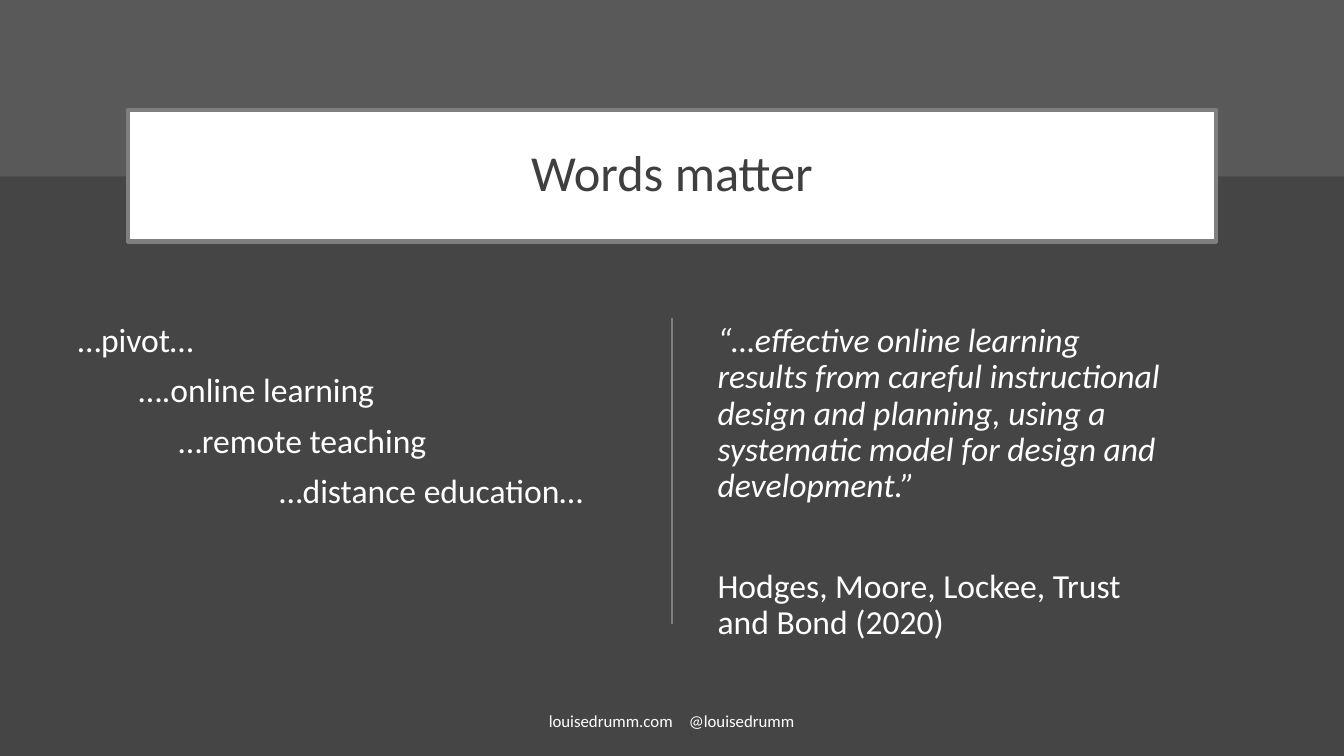
"""Build the "Words matter" slide."""
from pptx import Presentation
from pptx.dml.color import RGBColor as Rgb
from pptx.enum.shapes import MSO_CONNECTOR as Conn, MSO_SHAPE as Shape
from pptx.enum.text import MSO_ANCHOR as Anchor, PP_ALIGN as Align
from pptx.oxml.ns import qn
from pptx.util import Pt
from lxml.etree import SubElement as Sub

DARK = Rgb(0x45, 0x45, 0x45)
BAND = Rgb(0x59, 0x59, 0x59)
EDGE = Rgb(0x7F, 0x7F, 0x7F)
INK = Rgb(0x3F, 0x3F, 0x3F)
WHITE = Rgb(0xFF, 0xFF, 0xFF)
TOP = 227.5


def add_rect(left, top, width, height, fill):
    rect = slide.shapes.add_shape(
        Shape.RECTANGLE, Pt(left), Pt(top), Pt(width), Pt(height))
    rect.shadow.inherit = False
    rect.fill.solid()
    rect.fill.fore_color.rgb = fill
    rect.line.fill.background()
    return rect


def set_text(shape, lines, size, color):
    frame = shape.text_frame
    frame.word_wrap = True
    frame.text = "\n".join(lines)
    for par in frame.paragraphs:
        for run in par.runs:
            run.font.name = "Calibri"
            run.font.size = Pt(size)
            run.font.color.rgb = color
    return frame


deck = Presentation()
deck.slide_width, deck.slide_height = Pt(960), Pt(540)
slide = deck.slides.add_slide(deck.slide_layouts[6])
slide.background.fill.solid()
slide.background.fill.fore_color.rgb = DARK

add_rect(0, 0, 960, 126, BAND)

title = add_rect(91.5, 78.5, 777, 94, WHITE)
title.line.color.rgb = EDGE
title.line.width = Pt(3)
frame = set_text(title, ["Words matter"], 36, INK)
frame.vertical_anchor = Anchor.MIDDLE
frame.paragraphs[0].alignment = Align.CENTER
frame.paragraphs[0].line_spacing = 0.9

terms = ["…pivot…", "….online learning", "…remote teaching",
         "…distance education…"]
quote = ["“…effective online learning results from careful instructional "
         "design and planning, using a systematic model for design and "
         "development.”",
         "Hodges, Moore, Lockee, Trust and Bond (2020)"]
columns = [
    (48.5, 406, terms, [0, 43.5, 72, 144], [10, 10, 10, 10]),
    (505.5, 338, quote, [0, 0], [10, 46]),
]
for left, width, lines, steps, gaps in columns:
    box = slide.shapes.add_textbox(Pt(left), Pt(TOP), Pt(width), Pt(233))
    frame = set_text(box, lines, 24, WHITE)
    for par, step, gap in zip(frame.paragraphs, steps, gaps):
        par.line_spacing = 0.9
        par.space_before = Pt(gap)
        props = par._p.get_or_add_pPr()
        props.set("marL", str(Pt(step)))
        props.set("indent", "0")
frame.paragraphs[0].runs[0].font.italic = True

rule = slide.shapes.add_connector(
    Conn.STRAIGHT, Pt(480), Pt(TOP), Pt(480), Pt(445.5))
rule.line.color.rgb = EDGE
rule.line.width = Pt(1.5)
Sub(rule._element.spPr, qn("a:effectLst"))

foot = slide.shapes.add_textbox(Pt(318), Pt(500.5), Pt(324), Pt(29))
frame = set_text(foot, ["louisedrumm.com\t@louisedrumm"], 12, WHITE)
frame.vertical_anchor = Anchor.MIDDLE
frame.margin_left = Pt(74)
props = frame.paragraphs[0]._p.get_or_add_pPr()
stops = Sub(props, qn("a:tabLst"))
Sub(stops, qn("a:tab"), pos=str(Pt(100)), algn="l")

deck.save("out.pptx")
